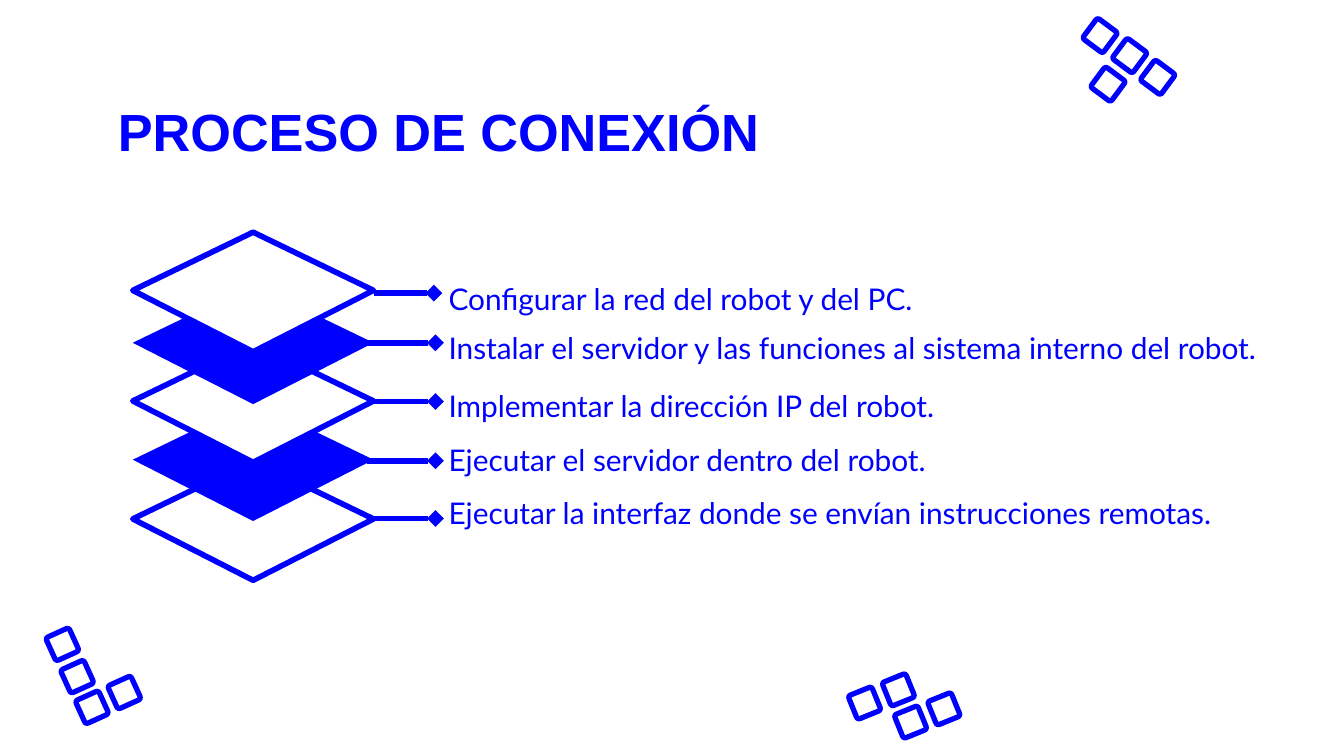
import math

from lxml import etree
from pptx import Presentation
from pptx import util as u
from pptx.dml.color import RGBColor
from pptx.enum import shapes, text
from pptx.oxml import ns

Cm = u.Cm
COLORS = {"blue": "0000FE", "white": "FFFFFF"}

# Text formats
TITLE = {"name": "Arial", "size": u.Pt(28), "bold": True}
STEP = {"name": "Lato", "size": u.Pt(16)}

# Steps from top to bottom: wording, text top, text width, text height
STEPS = [
    ("Configurar la red del robot y del PC.", 4.95, 16.08, 1.37),
    ("Instalar el servidor y las funciones al sistema interno del robot.",
     5.89, 16.08, 1.37),
    ("Implementar la dirección IP del robot.", 7.16, 12.17, 1.02),
    ("Ejecutar el servidor dentro del robot.", 8.18, 12.17, 1.02),
    ("Ejecutar la interfaz donde se envían instrucciones remotas.",
     9.17, 16.08, 1.02),
]

# Stack of layers from bottom to top: top edge, fill
LAYERS = [(8.71, "white"), (7.59, "blue"), (6.48, "white"),
          (5.38, "blue"), (4.39, "white")]

# Pointers: start, end, height
LINES = [(7.06, 8.20, 5.54)] + [(6.93, 8.23, y) for y in (6.48, 7.59, 8.71, 9.8)]

# Corner groups: rotation, corners of the squares
TILES = [
    (337.9, [(16.69, 12.75), (16.92, 13.36), (17.55, 13.11), (16.05, 13.0)]),
    (216.6, [(20.65, 1.3), (21.06, 0.76), (20.5, 0.38), (21.59, 1.17)]),
    (335.6, [(1.17, 12.5), (0.89, 11.89), (1.45, 13.08), (2.06, 12.8)]),
]
SIDE, EDGE, BEND = 0.58, 0.1, 0.1


def rgb(key):
    return RGBColor.from_string(COLORS[key])


def outline(tree, *loops):
    """Build one filled shape from closed loops of points in cm."""
    loops = [[(Cm(x), Cm(y)) for x, y in loop] for loop in loops]
    pen = tree.build_freeform(*loops[0][0])
    pen.add_line_segments(loops[0][1:], close=True)
    for loop in loops[1:]:
        pen.move_to(*loop[0])
        pen.add_line_segments(loop[1:], close=True)
    shape = pen.convert_to_shape()
    shape.shadow.inherit = False
    shape.fill.solid()
    return shape


def tile(tree, x, y, turn):
    """Draw a hollow square with rounded outer corners."""
    mid, arm = SIDE / 2, SIDE / 2 - BEND
    outer = []
    for quad in range(4):
        base = math.radians(45 + 90 * quad)
        cx = x + mid + math.copysign(arm, math.cos(base))
        cy = y + mid + math.copysign(arm, math.sin(base))
        for step in range(5):
            ang = math.radians(90 * quad + 22.5 * step)
            outer.append((cx + BEND * math.cos(ang), cy + BEND * math.sin(ang)))
    low, high = EDGE, SIDE - EDGE
    inner = [(x + a, y + b) for a, b in
             ((low, low), (low, high), (high, high), (high, low))]
    shape = outline(tree, outer, inner)
    shape.fill.fore_color.rgb = rgb("blue")
    shape.line.fill.background()
    shape.rotation = turn


def layer(tree, top, fill):
    """Draw one diamond of the stack."""
    left, wide, tall, half = 2.51, 4.55, 2.26, 1.1
    shape = outline(tree, [
        (left + wide / 2, top), (left, top + half),
        (left + wide / 2, top + tall), (left + wide, top + half)])
    shape.fill.fore_color.rgb = rgb(fill)
    if fill == "white":
        shape.line.color.rgb = rgb("blue")
        shape.line.width = u.Pt(3)
    else:
        shape.line.fill.background()


def pointer(tree, start, end, y):
    """Draw a line that ends in a diamond."""
    line = tree.add_connector(shapes.MSO_CONNECTOR.STRAIGHT,
                              Cm(start), Cm(y), Cm(end), Cm(y))
    line.line.color.rgb = rgb("blue")
    line.line.width = u.Pt(3)
    etree.SubElement(line.line._get_or_add_ln(), ns.qn("a:tailEnd"),
                     type="diamond")
    etree.SubElement(line._element.spPr, ns.qn("a:effectLst"))


def label(tree, words, box, style, anchor, space=1.0):
    """Add one line of blue text."""
    frame = tree.add_textbox(*map(Cm, box)).text_frame
    margins = {"margin_" + side: Cm(0.25)
               for side in ("left", "right", "top", "bottom")}
    for key, value in margins.items():
        setattr(frame, key, value)
    frame.word_wrap = True
    frame.vertical_anchor = anchor
    para = frame.paragraphs[0]
    para.line_spacing = space
    run = para.add_run()
    run.text = words
    for key, value in style.items():
        setattr(run.font, key, value)
    run.font.color.rgb = rgb("blue")


def main():
    deck = Presentation()
    deck.slide_width, deck.slide_height = Cm(25.4), Cm(14.29)
    slide = deck.slides.add_slide(deck.slide_layouts[6])
    slide.background.fill.solid()
    slide.background.fill.fore_color.rgb = rgb("white")
    tree = slide.shapes

    # Corner decoration
    for turn, spots in TILES:
        group = tree.add_group_shape().shapes
        for x, y in spots:
            tile(group, x, y, turn)

    # Title
    label(tree, "PROCESO DE CONEXIÓN", (1.98, 1.5, 21.44, 1.6), TITLE,
          text.MSO_ANCHOR.TOP, 1.1)

    # Stack and its pointers
    for top, fill in LAYERS:
        layer(tree, top, fill)
    for start, end, y in LINES:
        pointer(tree, start, end, y)

    # Step texts
    for words, top, wide, tall in STEPS:
        label(tree, words, (8.23, top, wide, tall), STEP,
              text.MSO_ANCHOR.MIDDLE)

    deck.save("out.pptx")


if __name__ == "__main__":
    main()
